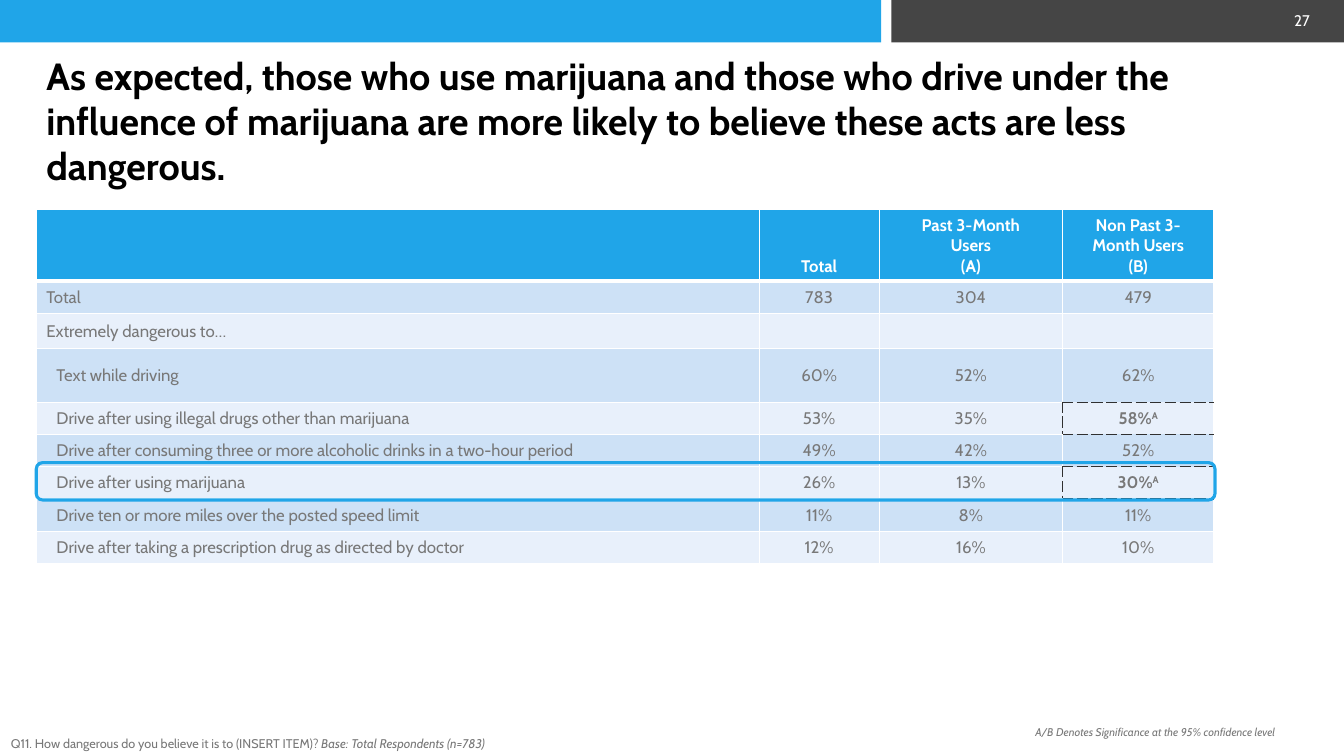
"""Build a slide with a table of how dangerous users and non-users rate driving acts."""
from lxml import etree
from pptx import Presentation
from pptx import util as u
from pptx.dml.color import RGBColor
from pptx.enum import shapes, text
from pptx.oxml import ns


class Theme:
    font = "Cabin"
    blue, charcoal, white, black = "20A5E8", "454545", "FFFFFF", "000000"
    grey, dash, bands = "787878", "303030", ("CDE1F6", "E8F0FB")
    title, table, number, question, note = 27, 12, 11, 9, 8


def add_run(paragraph, words, size, color, bold=False, italic=False):
    run = paragraph.add_run()
    run.text = words
    run.font.name, run.font.size = Theme.font, u.Pt(size)
    run.font.bold, run.font.italic = bold, italic
    run.font.color.rgb = RGBColor.from_string(color)
    return run


def add_border(cell, side, color, width, dashed):
    properties = cell._tc.get_or_add_tcPr()
    line = etree.SubElement(properties, ns.qn(f"a:ln{side}"), w=str(u.Pt(width)))
    fill = etree.SubElement(line, ns.qn("a:solidFill"))
    etree.SubElement(fill, ns.qn("a:srgbClr"), val=color)
    etree.SubElement(line, ns.qn("a:prstDash"), val="dash" if dashed else "solid")


presentation = Presentation()
presentation.slide_width, presentation.slide_height = u.Inches(13.33), u.Inches(7.5)
slide = presentation.slides.add_slide(presentation.slide_layouts[5])

for left, width, color in [(8.84, 4.49, Theme.charcoal), (0, 8.74, Theme.blue)]:
    bar = slide.shapes.add_shape(shapes.MSO_SHAPE.RECTANGLE, u.Inches(left), 0,
                                 u.Inches(width), u.Inches(0.42))
    bar.shadow.inherit = False
    bar.fill.solid()
    bar.fill.fore_color.rgb = RGBColor.from_string(color)
    bar.line.fill.background()

title = slide.shapes.title
title.left, title.top = u.Inches(0.36), u.Inches(0.87)
title.width, title.height = u.Inches(12.66), u.Inches(0.65)
title.text_frame.auto_size = text.MSO_AUTO_SIZE.NONE
title.text_frame.word_wrap = True
title.text_frame.vertical_anchor = text.MSO_ANCHOR.MIDDLE
paragraph = title.text_frame.paragraphs[0]
paragraph.alignment = text.PP_ALIGN.LEFT
add_run(paragraph, "As expected, those who use marijuana and those who drive under the "
        "influence of marijuana are more likely to believe these acts are less dangerous.",
        Theme.title, Theme.black, bold=True)

rows = [
    ("", "Total", "Past 3-Month\nUsers\n(A)", "Non Past 3-Month Users\n(B)"),
    ("Total", "783", "304", "479"),
    ("Extremely dangerous to…", "", "", ""),
    ("Text while driving", "60%", "52%", "62%"),
    ("Drive after using illegal drugs other than marijuana", "53%", "35%", "58%"),
    ("Drive after consuming three or more alcoholic drinks in a two-hour period",
     "49%", "42%", "52%"),
    ("Drive after using marijuana", "26%", "13%", "30%"),
    ("Drive ten or more miles over the posted speed limit", "11%", "8%", "11%"),
    ("Drive after taking a prescription drug as directed by doctor", "12%", "16%", "10%"),
]
column_widths = [7.17, 1.19, 1.82, 1.5]
row_heights = [0.71, 0.32, 0.35, 0.53] + [0.32] * 5
significant = {(4, 3), (6, 3)}
first_act = 3

table = slide.shapes.add_table(len(rows), len(column_widths), u.Inches(0.36), u.Inches(2.08),
                               u.Inches(sum(column_widths)), u.Inches(sum(row_heights))).table
for column, width in zip(table.columns, column_widths):
    column.width = u.Inches(width)
for row, height in zip(table.rows, row_heights):
    row.height = u.Inches(height)

for r, values in enumerate(rows):
    header = r == 0
    for c, value in enumerate(values):
        cell = table.cell(r, c)
        marked = (r, c) in significant
        dashed_sides = {"L": marked, "R": (r, c + 1) in significant,
                        "T": marked or (r - 1, c) in significant,
                        "B": marked or (r + 1, c) in significant}
        for side, dashed in dashed_sides.items():
            thick = (header and side == "B") or (r == 1 and side == "T")
            add_border(cell, side, Theme.dash if dashed else Theme.white,
                       3 if thick else 1, dashed)
        cell.fill.solid()
        cell.fill.fore_color.rgb = RGBColor.from_string(
            Theme.blue if header else Theme.bands[(r - 1) % 2])
        cell.vertical_anchor = (text.MSO_ANCHOR.BOTTOM if header and c == 1
                                else text.MSO_ANCHOR.MIDDLE)
        for i, words in enumerate(value.split("\n")):
            paragraph = cell.text_frame.paragraphs[0] if i == 0 else cell.text_frame.add_paragraph()
            paragraph.alignment = text.PP_ALIGN.CENTER if c else text.PP_ALIGN.LEFT
            if c == 0 and r >= first_act:
                paragraph._p.get_or_add_pPr().set("marL", str(u.Inches(0.1)))
            color = Theme.white if header else Theme.grey
            if words:
                add_run(paragraph, words, Theme.table, color, bold=header or marked)
            else:
                etree.SubElement(paragraph._p, ns.qn("a:endParaRPr"), sz=str(Theme.table * 100))
            if marked:
                letter = add_run(paragraph, "A", Theme.table, color, bold=True)
                letter.font._element.set("baseline", "30000")

captions = [
    (12.49, 0.04, 0.6, 0.33, text.PP_ALIGN.RIGHT, text.MSO_ANCHOR.MIDDLE,
     Theme.number, Theme.white, [("27", False)]),
    (0.01, 7.25, 8.16, 0.25, text.PP_ALIGN.LEFT, text.MSO_ANCHOR.TOP, Theme.question, Theme.grey,
     [("Q11. How dangerous do you believe it is to (INSERT ITEM)? ", False),
      ("Base: Total Respondents (n=783)", True)]),
    (10.17, 7.15, 3.16, 0.24, text.PP_ALIGN.LEFT, text.MSO_ANCHOR.TOP, Theme.note, Theme.grey,
     [("A/B Denotes Significance at the 95% confidence level", True)]),
]
for left, top, width, height, alignment, anchor, size, color, runs in captions:
    box = slide.shapes.add_textbox(u.Inches(left), u.Inches(top), u.Inches(width), u.Inches(height))
    box.text_frame.word_wrap = True
    box.text_frame.vertical_anchor = anchor
    paragraph = box.text_frame.paragraphs[0]
    paragraph.alignment = alignment
    for words, italic in runs:
        add_run(paragraph, words, size, color, italic=italic)

highlight = slide.shapes.add_shape(shapes.MSO_SHAPE.ROUNDED_RECTANGLE, u.Inches(0.36),
                                   u.Inches(4.59), u.Inches(11.69), u.Inches(0.37))
highlight.shadow.inherit = False
highlight.fill.background()
highlight.line.color.rgb = RGBColor.from_string(Theme.blue)
highlight.line.width = u.Pt(2.25)

presentation.save("out.pptx")
